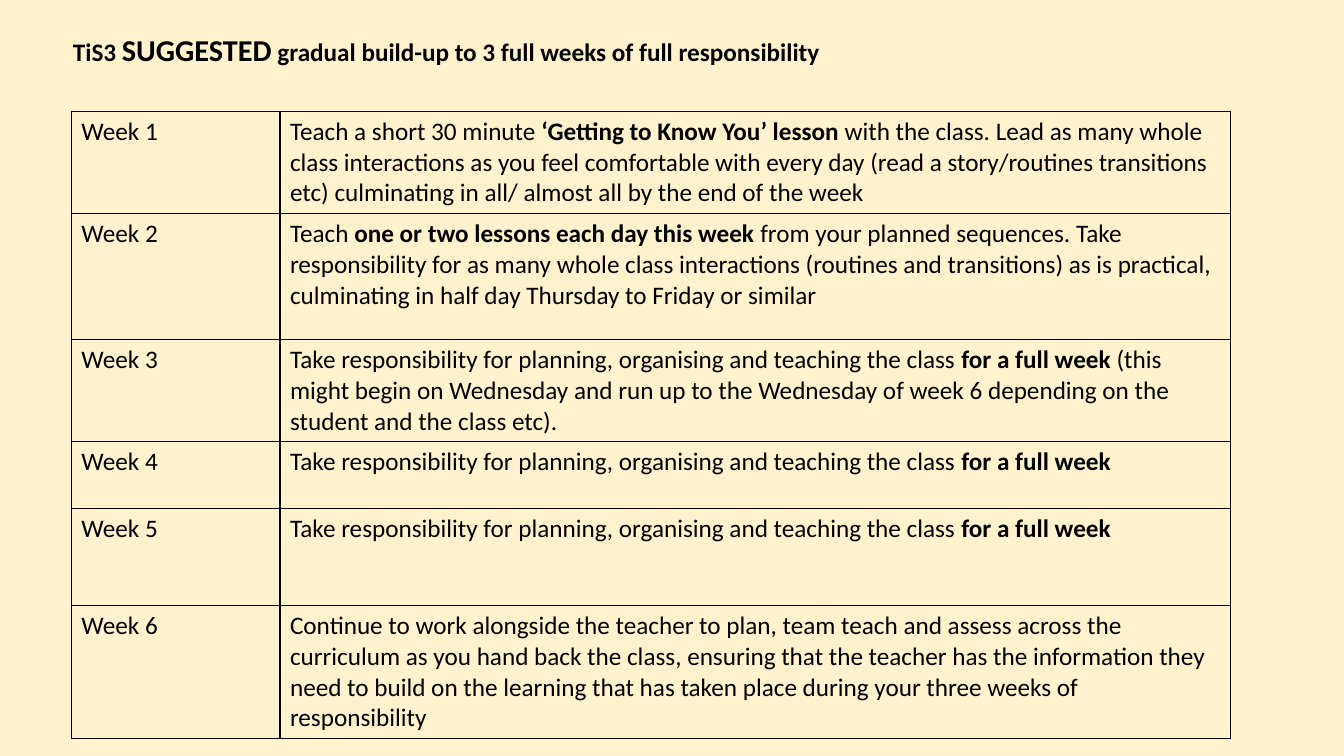
from dataclasses import dataclass

import lxml.etree
import pptx
import pptx.dml.color
import pptx.enum.text
import pptx.oxml.ns
import pptx.util

Pt = pptx.util.Pt


@dataclass(frozen=True)
class Theme:
    background: str = "FFF2CC"
    ink: str = "000000"
    font: str = "Calibri"
    body: float = 18
    emphasis: float = 21.6
    border: float = 1


THEME = Theme()

# Each run is (text, bold)
FULL_WEEK = [
    ("Take responsibility for planning, organising and teaching the class ", False),
    ("for a full week", True),
]
# Each week is (row height, runs of its plan)
WEEKS = [
    (73, [
        ("Teach a short 30 minute ", False),
        ("‘Getting to Know You’ lesson ", True),
        ("with the class. Lead as many whole class interactions as you feel "
         "comfortable with every day (read a story/routines transitions etc) "
         "culminating in all/ almost all by the end of the week", False),
    ]),
    (90, [
        ("Teach ", False),
        ("one or two lessons each day this week ", True),
        ("from your planned sequences. Take responsibility for as many whole "
         "class interactions (routines and transitions) as is practical, "
         "culminating in half day Thursday to Friday or similar", False),
    ]),
    (73, FULL_WEEK + [
        (" (this might begin on Wednesday and run up to the Wednesday of week 6 "
         "depending on the student and the class etc).", False),
    ]),
    (48, FULL_WEEK),
    (69, FULL_WEEK),
    (95, [
        ("Continue to work alongside the teacher to plan, team teach and assess "
         "across the curriculum as you hand back the class, ensuring that the "
         "teacher has the information they need to build on the learning that "
         "has taken place during your three weeks of responsibility", False),
    ]),
]


def add_run(paragraph, text, bold=False, size=THEME.body):
    run = paragraph.add_run()
    run.text = text
    run.font.name = THEME.font
    run.font.size = Pt(size)
    run.font.bold = bold
    run.font.color.rgb = pptx.dml.color.RGBColor.from_string(THEME.ink)


def add_borders(cell):
    properties = cell._tc.get_or_add_tcPr()
    qn = pptx.oxml.ns.qn
    for position, side in enumerate(("lnL", "lnR", "lnT", "lnB")):
        line = lxml.etree.Element(qn(f"a:{side}"), w=str(Pt(THEME.border)))
        fill = lxml.etree.SubElement(line, qn("a:solidFill"))
        lxml.etree.SubElement(fill, qn("a:srgbClr"), val=THEME.ink)
        properties.insert(position, line)


def build_heading(slide, left, top, width, height):
    heading = slide.shapes.add_textbox(Pt(left), Pt(top), Pt(width), Pt(height))
    frame = heading.text_frame
    frame.word_wrap = True
    frame.vertical_anchor = pptx.enum.text.MSO_ANCHOR.TOP
    line = frame.paragraphs[0]
    line.line_spacing = 0.9
    add_run(line, "TiS3 ", True)
    add_run(line, "SUGGESTED", True, THEME.emphasis)
    add_run(line, " gradual build-up to 3 full weeks of full responsibility", True)


def build_schedule(slide, left, top, width, week_width):
    height = sum(row_height for row_height, _ in WEEKS)
    schedule = slide.shapes.add_table(
        len(WEEKS), 2, Pt(left), Pt(top), Pt(width), Pt(height)).table
    schedule.first_row = False
    schedule.horz_banding = False
    schedule.columns[0].width = Pt(week_width)
    schedule.columns[1].width = Pt(width - week_width)
    for index, (row_height, plan) in enumerate(WEEKS):
        schedule.rows[index].height = Pt(row_height)
        label = [(f"Week {index + 1}", False)]
        for cell, runs in zip(schedule.rows[index].cells, (label, plan)):
            cell.fill.background()
            add_borders(cell)
            for text, bold in runs:
                add_run(cell.text_frame.paragraphs[0], text, bold)


def main():
    deck = pptx.Presentation()
    deck.slide_width, deck.slide_height = Pt(960), Pt(540)
    slide = deck.slides.add_slide(deck.slide_layouts[6])
    backdrop = slide.background.fill
    backdrop.solid()
    backdrop.fore_color.rgb = pptx.dml.color.RGBColor.from_string(THEME.background)
    build_heading(slide, left=45, top=22, width=828, height=51)
    build_schedule(slide, left=51, top=79.5, width=828, week_width=149)
    deck.save("out.pptx")


if __name__ == "__main__":
    main()
